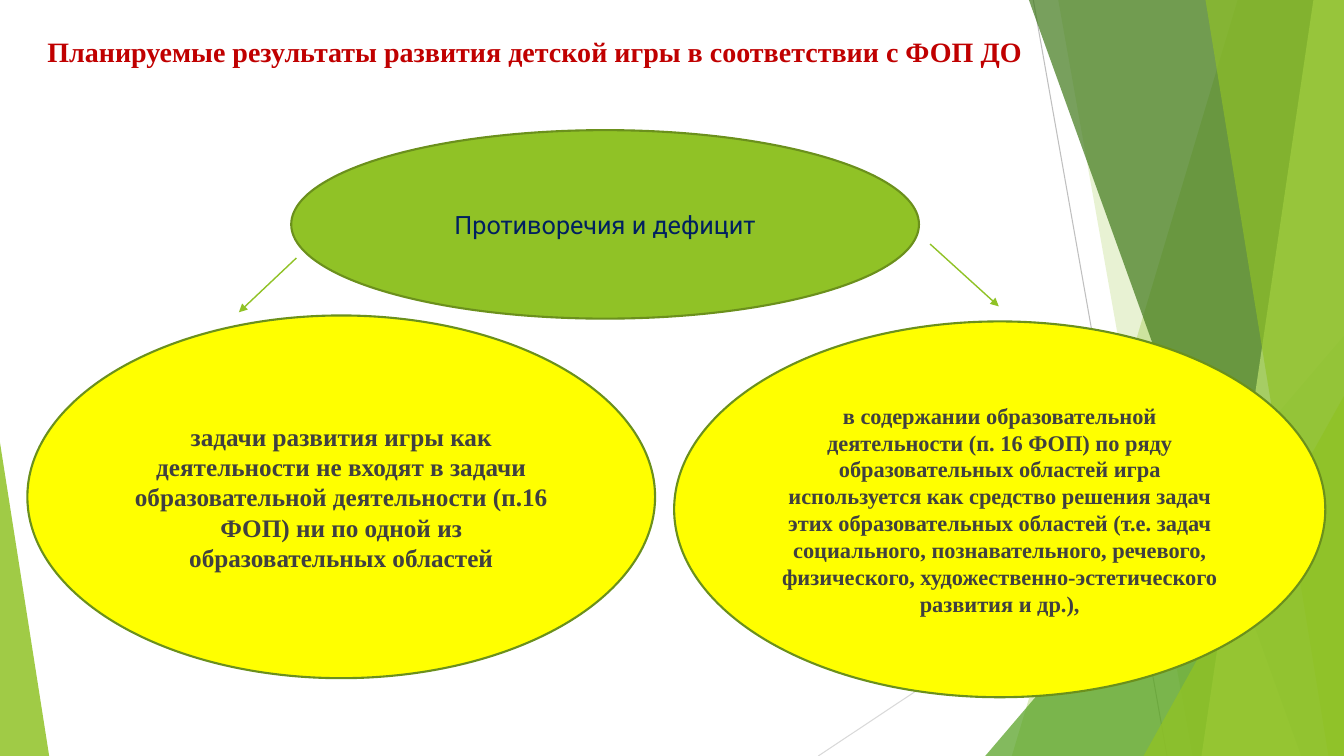
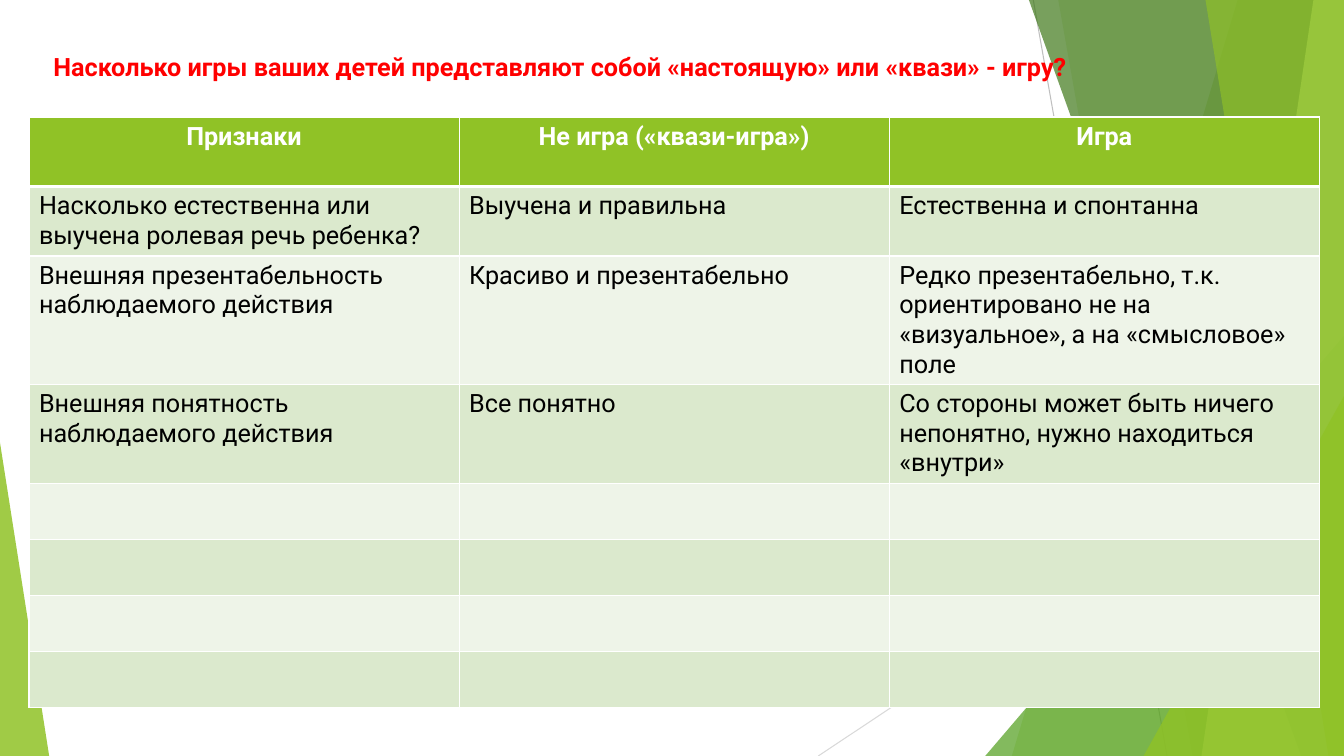
from typing import NamedTuple

from lxml.etree import SubElement
from pptx import Presentation
from pptx.dml.color import RGBColor
from pptx.enum.shapes import MSO_CONNECTOR as Connector, MSO_SHAPE as Shape
from pptx.enum.text import MSO_ANCHOR as Anchor, MSO_AUTO_SIZE as AutoSize, PP_ALIGN as Align
from pptx.oxml import parse_xml
from pptx.oxml.ns import nsdecls, qn
from pptx.util import Cm, Pt

COLORS = {
    "green": "90C226", "leaf": "54A021", "forest": "3F7819", "lime": "C0E474",
    "outline": "6B901C", "yellow": "FFFF00", "navy": "002060", "gray": "404040",
    "crimson": "C00000", "red": "FF0000", "white": "FFFFFF", "black": "000000",
    "line_dark": "BFBFBF", "line_light": "D9D9D9", "band": "DBE9CD", "pale": "EEF4E8",
}
SANS, SERIF = "Roboto", "Times New Roman"


class Box(NamedTuple):
    """A rectangle in centimetres."""
    left: float
    top: float
    width: float
    height: float

    def inner(self, left, top, width, height):
        """Return a box whose offset is measured from this one."""
        return Box(self.left + left, self.top + top, width, height)

    def point(self, x, y):
        """Return a point measured from the corner of this box."""
        return Cm(self.left + x), Cm(self.top + y)

    def lengths(self):
        """Return the four values as lengths."""
        return [Cm(value) for value in self]


PAGE = Box(0, 0, 33.87, 19.05)


def rgb(name):
    """Look up a named colour."""
    return RGBColor.from_string(COLORS[name])


def write(frame, text, font, size, color, bold=False, align=Align.LEFT):
    """Put one formatted run into a text frame."""
    paragraph = frame.paragraphs[0]
    paragraph.alignment = align
    run = paragraph.add_run()
    run.text = text
    run.font.name, run.font.size, run.font.bold = font, Pt(size), bold
    run.font.color.rgb = rgb(color)


def add_line(slide, box, start, end, color, width, arrow=False):
    """Draw a straight line inside a box, with an optional arrowhead."""
    line = slide.shapes.add_connector(Connector.STRAIGHT, *box.point(*start), *box.point(*end))
    line.line.color.rgb = rgb(color)
    line.line.width = Pt(width)
    if arrow:
        SubElement(line.line._get_or_add_ln(), qn("a:tailEnd"), type="triangle")
    SubElement(line.element.spPr, qn("a:effectLst"))
    return line


def paint_facet(shape, color, opacity):
    """Give a facet a see-through fill without an outline."""
    shape.shadow.inherit = False
    shape.fill.solid()
    shape.fill.fore_color.rgb = rgb(color)
    shape.line.fill.background()
    fill_color = shape.element.find(".//" + qn("a:srgbClr"))
    SubElement(fill_color, qn("a:alpha"), val=str(opacity * 1000))
    return shape


def add_strip(slide, box, top_x, bottom_x, color, opacity):
    """Draw a facet from a slanted left edge to the right edge of the box."""
    builder = slide.shapes.build_freeform(*box.point(top_x, 0), scale=1.0)
    corners = [(box.width, 0), (box.width, box.height), (bottom_x, box.height)]
    builder.add_line_segments([box.point(*corner) for corner in corners], close=True)
    return paint_facet(builder.convert_to_shape(), color, opacity)


def add_wedge(slide, box, width, height, color, opacity, on_right=True):
    """Draw a right-angled facet in a lower corner of the box."""
    left = box.width - width if on_right else 0
    place = box.inner(left, box.height - height, width, height)
    wedge = slide.shapes.add_shape(Shape.ISOSCELES_TRIANGLE, *place.lengths())
    wedge.adjustments[0] = 1 if on_right else 0
    return paint_facet(wedge, color, opacity)


def decorate_layout(slide, box):
    """Build the facets and hand them to the layout shared by all slides."""
    facets = [
        add_line(slide, box, (26.04, 0), (29.41, 19.05), "line_dark", 0.75),
        add_line(slide, box, (33.87, 10.24), (20.62, 19.05), "line_light", 0.75),
        add_strip(slide, box, 31.19, 25.5, "green", 30),
        add_strip(slide, box, 26.67, 30.05, "green", 20),
        add_wedge(slide, box, 9.04, 10.59, "leaf", 72),
        add_strip(slide, box, 25.93, 32.79, "forest", 70),
        add_strip(slide, box, 33.1, 30.28, "lime", 70),
        add_strip(slide, box, 30.38, 33.48, "green", 65),
        add_wedge(slide, box, 5.05, 9.07, "green", 80),
        add_wedge(slide, box, 1.24, 7.9, "green", 85, on_right=False),
    ]
    for position, facet in enumerate(facets, start=2):
        slide.slide_layout.shapes.element.insert(position, facet.element)


def set_title(slide, box, text, font, size, color):
    """Place and fill the title placeholder."""
    title = slide.shapes.title
    title.left, title.top, title.width, title.height = box.lengths()
    frame = title.text_frame
    frame.auto_size, frame.vertical_anchor = AutoSize.NONE, Anchor.TOP
    frame.word_wrap = True
    write(frame, text, font, size, color, bold=True)


def add_oval(slide, box, fill, text, font, size, color, bold):
    """Draw an outlined oval with centred text."""
    oval = slide.shapes.add_shape(Shape.OVAL, *box.lengths())
    oval.shadow.inherit = False
    oval.fill.solid()
    oval.fill.fore_color.rgb = rgb(fill)
    oval.line.color.rgb = rgb("outline")
    oval.line.width = Pt(1.5)
    oval.text_frame.word_wrap = True
    oval.text_frame.vertical_anchor = Anchor.MIDDLE
    write(oval.text_frame, text, font, size, color, bold, Align.CENTER)


def add_contradictions(slide, box):
    """Draw the main oval with arrows to its two explanations."""
    add_oval(slide, box.inner(6.65, 0, 15.82, 4.75), "green",
             "Противоречия и дефицит", SANS, 18, "navy", False)
    add_oval(slide, box.inner(0, 4.67, 15.82, 9.14), "yellow",
             "задачи развития игры как деятельности не входят в задачи образовательной "
             "деятельности (п.16 ФОП) ни по одной из образовательных областей",
             SERIF, 18, "gray", True)
    add_oval(slide, box.inner(16.3, 4.82, 16.41, 9.47), "yellow",
             "в содержании образовательной деятельности (п. 16 ФОП) по ряду образовательных "
             "областей игра используется как средство решения задач этих образовательных "
             "областей (т.е. задач социального, познавательного, речевого, физического, "
             "художественно-эстетического развития и др.),",
             SERIF, 16, "gray", True)
    add_line(slide, box, (22.75, 2.87), (24.48, 4.44), "green", 1, arrow=True)
    add_line(slide, box, (6.78, 3.22), (5.33, 4.59), "green", 1, arrow=True)


def set_borders(cell, top, bottom):
    """Give a cell white borders."""
    properties = cell._tc.get_or_add_tcPr()
    widths = {"lnL": 1, "lnR": 1, "lnT": top, "lnB": bottom}
    for position, (side, width) in enumerate(widths.items()):
        properties.insert(position, parse_xml(
            f'<a:{side} {nsdecls("a")} w="{Pt(width)}"><a:solidFill>'
            f'<a:srgbClr val="{COLORS["white"]}"/></a:solidFill></a:{side}>'))


def add_signs_table(slide, box):
    """Draw the comparison table with empty rows left to fill in."""
    rows = [
        ("Признаки", "Не игра («квази-игра»)", "Игра"),
        ("Насколько естественна или выучена ролевая речь ребенка?",
         "Выучена и правильна", "Естественна и спонтанна"),
        ("Внешняя презентабельность наблюдаемого действия", "Красиво и презентабельно",
         "Редко презентабельно, т.к. ориентировано не на «визуальное», а на «смысловое» поле"),
        ("Внешняя понятность наблюдаемого действия", "Все понятно",
         "Со стороны может быть ничего непонятно, нужно находиться «внутри»"),
    ] + [("", "", "")] * 4
    heights = [1.75, 1.75, 3.23, 2.5] + [1.41] * 4
    table = slide.shapes.add_table(len(rows), 3, *box.lengths()).table
    for column in table.columns:
        column.width = Cm(box.width / 3)
    for index, (texts, height) in enumerate(zip(rows, heights)):
        table.rows[index].height = Cm(height)
        header = index == 0
        fill = "green" if header else ("pale", "band")[index % 2]
        for cell, text in zip(table.rows[index].cells, texts):
            cell.fill.solid()
            cell.fill.fore_color.rgb = rgb(fill)
            set_borders(cell, 3 if index == 1 else 1, 3 if header else 1)
            if text:
                write(cell.text_frame, text, SANS, 18, "white" if header else "black",
                      header, Align.CENTER if header else Align.LEFT)


def main():
    """Build and save the presentation."""
    presentation = Presentation()
    presentation.slide_width, presentation.slide_height = Cm(PAGE.width), Cm(PAGE.height)
    title_only = presentation.slide_layouts[5]

    slide = presentation.slides.add_slide(title_only)
    decorate_layout(slide, PAGE)
    set_title(slide, Box(0.94, 0.74, 25.58, 1.17),
              "Планируемые результаты развития детской игры в соответствии с ФОП ДО",
              SERIF, 20, "crimson")
    add_contradictions(slide, Box(0.69, 3.28, 32.71, 14.29))

    slide = presentation.slides.add_slide(title_only)
    set_title(slide, Box(1.09, 1.17, 28.68, 1.3),
              "Насколько игры ваших детей представляют собой «настоящую» или «квази» - игру?",
              SANS, 18, "red")
    add_signs_table(slide, Box(0.73, 2.95, 32.52, 14.87))

    presentation.save("out.pptx")


if __name__ == "__main__":
    main()
